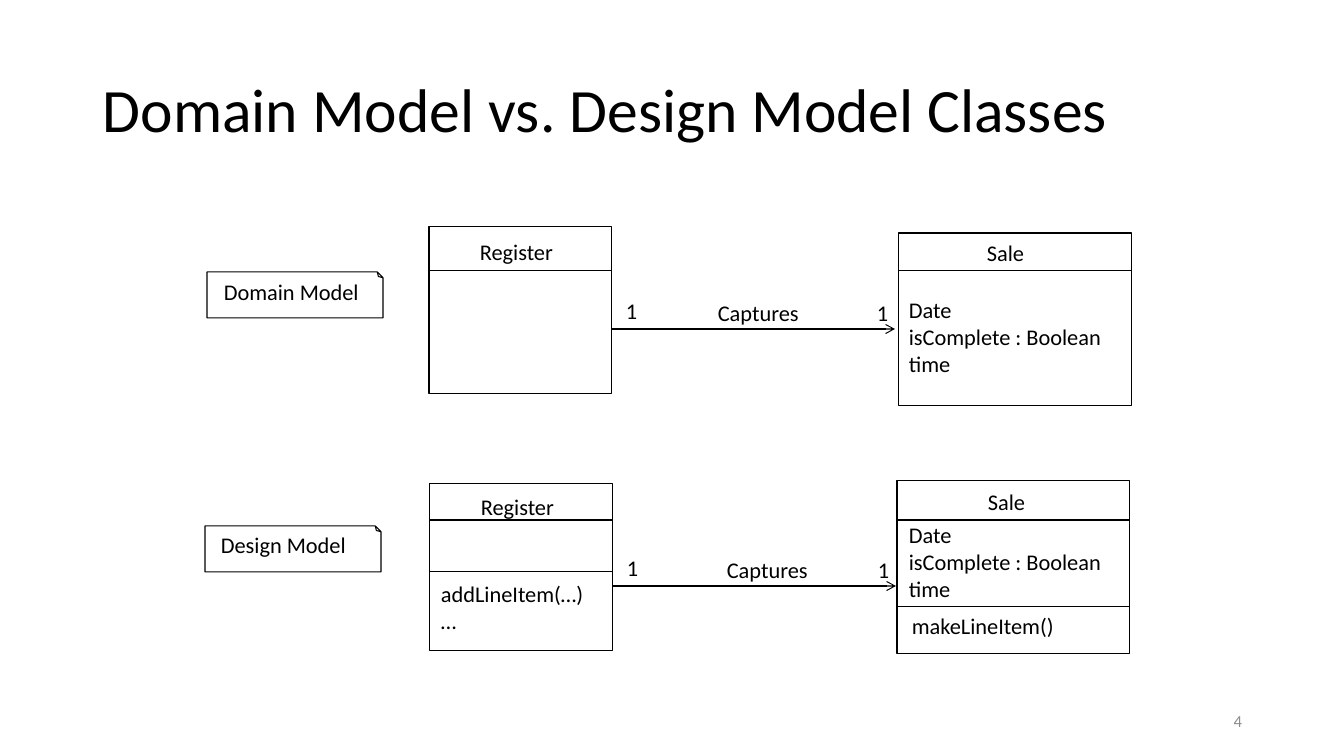
from lxml import etree
from pptx import Presentation
from pptx.dml.color import RGBColor
from pptx.enum.shapes import MSO_CONNECTOR, MSO_SHAPE
from pptx.enum.text import MSO_ANCHOR, PP_ALIGN
from pptx.oxml.ns import qn
from pptx.util import Emu, Pt

STRAIGHT = MSO_CONNECTOR.STRAIGHT
RECTANGLE, FOLDED_CORNER = MSO_SHAPE.RECTANGLE, MSO_SHAPE.FOLDED_CORNER
TOP, MIDDLE = MSO_ANCHOR.TOP, MSO_ANCHOR.MIDDLE
LEFT, RIGHT = PP_ALIGN.LEFT, PP_ALIGN.RIGHT
COLORS = {"ink": "000000", "number": "8C8C8C"}
PX_PER_INCH = 100.8
SLIDE_WIDTH, SLIDE_HEIGHT = 1344, 756
LABEL_HEIGHT = 37
REGISTER_SIZE = (183, 167)
SALE_SIZE = (233, 173)
NOTE_SIZE = (176, 46)
SALE_ATTRIBUTES = "Date\nisComplete : Boolean\ntime"


def px(length):
    return Emu(round(length * 914400 / PX_PER_INCH))


class ClassDiagram:
    font = "Calibri"
    text_size = 16
    line_width = 0.75

    def __init__(self, slide):
        self.slide = slide

    def style_line(self, line):
        line.color.rgb = RGBColor.from_string(COLORS["ink"])
        line.width = Pt(self.line_width)

    def text(self, content, left, top, width, height=LABEL_HEIGHT, size=text_size,
             color="ink", anchor=TOP, align=LEFT, wrap=False, spacing=None):
        box = self.slide.shapes.add_textbox(px(left), px(top), px(width), px(height))
        frame = box.text_frame
        frame.word_wrap = wrap
        frame.vertical_anchor = anchor
        frame.text = content
        for paragraph in frame.paragraphs:
            paragraph.alignment = align
            paragraph.line_spacing = spacing
            for run in paragraph.runs:
                run.font.name = self.font
                run.font.size = Pt(size)
                run.font.color.rgb = RGBColor.from_string(COLORS[color])

    def outline(self, kind, left, top, size):
        """Draw an unfilled preset shape."""
        shape = self.slide.shapes.add_shape(kind, px(left), px(top), *map(px, size))
        shape.shadow.inherit = False
        shape.fill.background()
        self.style_line(shape.line)
        return shape

    def line(self, left, right, y, arrow=False):
        connector = self.slide.shapes.add_connector(
            STRAIGHT, px(left), px(y), px(right), px(y))
        self.style_line(connector.line)
        properties = connector._element.spPr
        if arrow:
            etree.SubElement(properties.find(qn("a:ln")), qn("a:tailEnd"), type="arrow")
        etree.SubElement(properties, qn("a:effectLst"))

    def class_box(self, left, top, size, dividers):
        self.outline(RECTANGLE, left, top, size)
        for y in dividers:
            self.line(left, left + size[0], y)

    def note(self, content, left, top, text_left, text_top, text_width):
        shape = self.outline(FOLDED_CORNER, left, top, NOTE_SIZE)
        properties = shape._element.spPr
        properties.find(qn("a:xfrm")).set("flipV", "1")
        guides = properties.find(qn("a:prstGeom")).find(qn("a:avLst"))
        etree.SubElement(guides, qn("a:gd"), name="adj", fmla="val 12500")
        self.text(content, text_left, text_top, text_width)

    def association(self, left, y, label_left):
        """Draw the arrow from Register to Sale with its name and both counts."""
        self.line(left, left + 283, y, arrow=True)
        self.text("1", left + 4, y - 37, 32)
        self.text("Captures", label_left, y - 35, 102)
        self.text("1", left + 255, y - 35, 32)


def main():
    presentation = Presentation()
    presentation.slide_width = px(SLIDE_WIDTH)
    presentation.slide_height = px(SLIDE_HEIGHT)
    diagram = ClassDiagram(presentation.slides.add_slide(presentation.slide_layouts[6]))

    diagram.text("Domain Model vs. Design Model Classes", 93, 40, 1159, 146,
                 size=44, anchor=MIDDLE, wrap=True, spacing=0.9)
    diagram.text("4", 950, 701, 302, 40, size=12, color="number",
                 anchor=MIDDLE, align=RIGHT, wrap=True)

    diagram.note("Domain Model", 207, 272, 214, 273, 157)
    diagram.class_box(429, 227, REGISTER_SIZE, [271])
    diagram.text("Register", 470, 233, 95)
    diagram.association(612, 329, 708)
    diagram.class_box(899, 233, SALE_SIZE, [271])
    diagram.text("Sale", 977, 234, 58)
    diagram.text(SALE_ATTRIBUTES, 899, 291, 215, 92)

    diagram.note("Design Model", 205, 526, 211, 526, 147)
    diagram.class_box(430, 484, REGISTER_SIZE, [520, 572])
    diagram.text("Register", 471, 488, 95)
    diagram.text("addLineItem(…)\n…", 431, 575, 164, 65)
    diagram.association(613, 586, 717)
    diagram.class_box(897, 481, SALE_SIZE, [520, 607])
    diagram.text("Sale", 978, 483, 58)
    diagram.text(SALE_ATTRIBUTES, 899, 516, 215, 92)
    diagram.text("makeLineItem()", 902, 607, 164)

    presentation.save("out.pptx")


if __name__ == "__main__":
    main()
